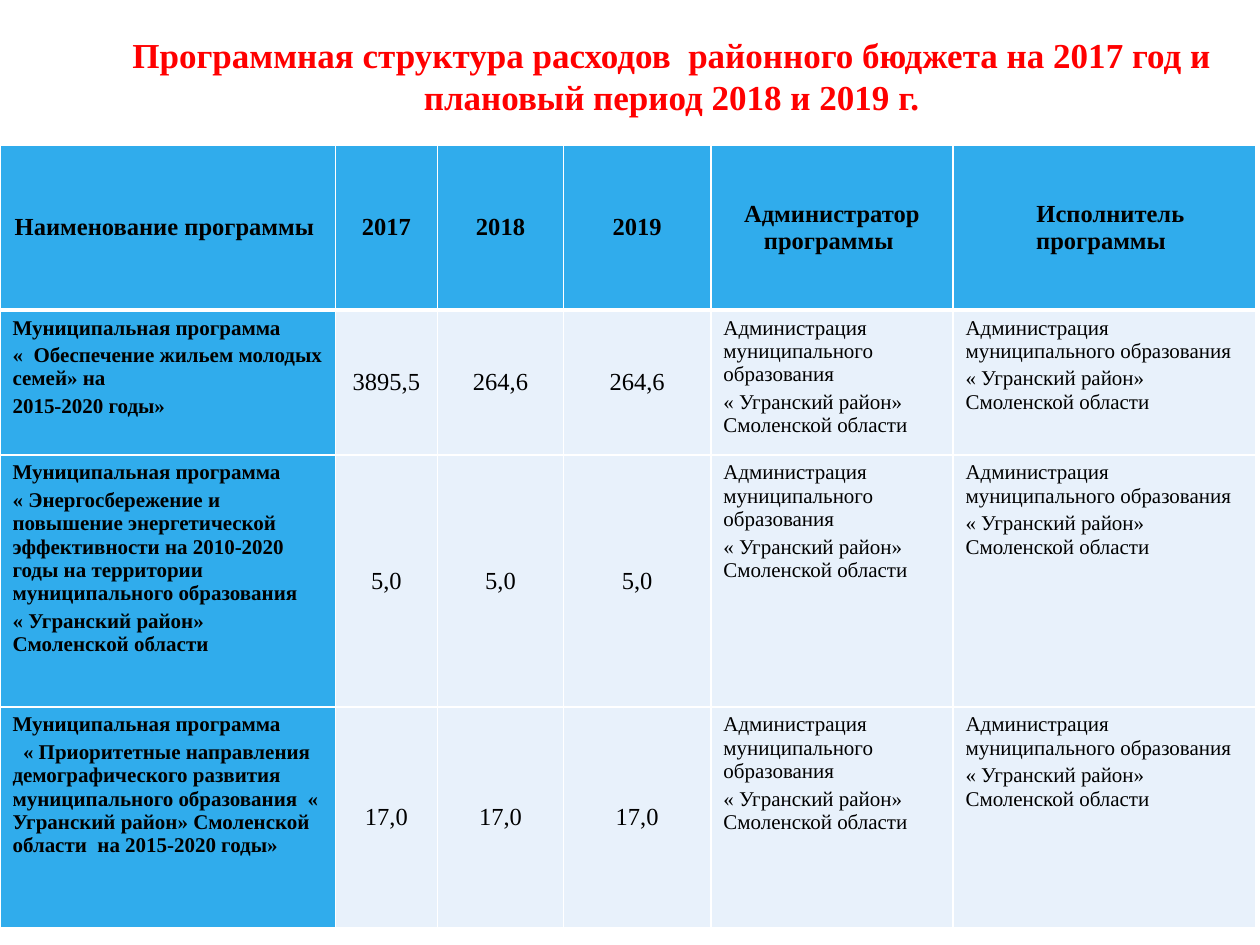
"""Build the slide with the programme structure of the district budget."""
from dataclasses import dataclass

from lxml.etree import SubElement
from pptx import Presentation
from pptx.dml.color import RGBColor
from pptx.enum.text import MSO_ANCHOR as Anchor, MSO_AUTO_SIZE as AutoSize, PP_ALIGN as Align
from pptx.oxml.ns import qn
from pptx.util import Cm, Pt

RED = RGBColor(0xFF, 0x00, 0x00)
BLACK = RGBColor(0x00, 0x00, 0x00)
WHITE = RGBColor(0xFF, 0xFF, 0xFF)
BLUE = RGBColor(0x30, 0xAC, 0xEC)
PALE = RGBColor(0xE8, 0xF1, 0xFB)
FONT = "Times New Roman"

COLS = [6.76, 2.06, 2.54, 2.97, 4.88, 6.1]
ROWS = [3.33, 2.92, 5.08, 4.45]
HEADS = ["Наименование программы ", "2017", "2018", "2019",
         "Администратор программы ", "Исполнитель программы "]
OFFICE = ["Администрация муниципального образования",
          "« Угранский район» Смоленской области"]


@dataclass
class Programme:
    name: list[str]
    sums: list[str]


@dataclass
class Style:
    size: int
    bold: bool
    fill: RGBColor
    centred: bool


HEAD = Style(14, True, BLUE, True)
NAME = Style(12, True, BLUE, False)
SUM = Style(14, False, PALE, True)
BODY = Style(12, False, PALE, False)

PROGRAMMES = [
    Programme(["Муниципальная программа",
               "«  Обеспечение жильем молодых семей» на",
               "2015-2020 годы»"], ["3895,5", "264,6", "264,6"]),
    Programme(["Муниципальная программа",
               "« Энергосбережение и повышение энергетической эффективности на 2010-2020 "
               "годы на территории муниципального образования",
               "« Угранский район» Смоленской области"], ["5,0"] * 3),
    Programme(["Муниципальная программа",
               "« Приоритетные направления  демографического развития  муниципального "
               "образования  « Угранский район» Смоленской области  на 2015-2020 годы»"],
              ["17,0"] * 3),
]


def add_run(p, text: str, size: int, bold: bool, color: RGBColor) -> None:
    """Add one formatted run to a paragraph."""
    r = p.add_run()
    r.text = text
    r.font.name, r.font.size, r.font.bold = FONT, Pt(size), bold
    r.font.color.rgb = color


def set_borders(cell, top: int, bottom: int) -> None:
    """Give a cell white borders, placed ahead of its fill."""
    tc_pr = cell._tc.get_or_add_tcPr()
    widths = {"a:lnL": 1, "a:lnR": 1, "a:lnT": top, "a:lnB": bottom}
    for tag, width in widths.items():
        ln = SubElement(tc_pr, qn(tag), w=str(Pt(width)))
        fill = SubElement(ln, qn("a:solidFill"))
        SubElement(fill, qn("a:srgbClr"), val=str(WHITE))


def fill_cell(cell, lines: list[str], style: Style, row: int) -> None:
    """Write the paragraphs of a cell and set its look."""
    set_borders(cell, 3 if row == 1 else 1, 3 if row == 0 else 1)
    cell.fill.solid()
    cell.fill.fore_color.rgb = style.fill
    cell.vertical_anchor = Anchor.MIDDLE if style.centred else Anchor.TOP
    tf = cell.text_frame
    for i, line in enumerate(lines):
        p = tf.add_paragraph() if i else tf.paragraphs[0]
        p.alignment = Align.CENTER if style.centred else Align.LEFT
        p.space_before = Pt(0.2 * style.size if i else 0)
        add_run(p, line, style.size, style.bold, BLACK)


def indent_first_line(p, indent: Cm) -> None:
    """Indent the first line of a paragraph."""
    p_pr = p._p.get_or_add_pPr()
    p_pr.set("marL", "0")
    p_pr.set("indent", str(int(indent)))


def add_title(s, text: str) -> None:
    """Place and format the slide title."""
    sp = s.shapes.title
    sp.left, sp.top, sp.width, sp.height = Cm(2.11), Cm(0.84), Cm(22.86), Cm(1.35)
    tf = sp.text_frame
    tf.word_wrap, tf.auto_size = True, AutoSize.NONE
    tf.vertical_anchor = Anchor.MIDDLE
    p = tf.paragraphs[0]
    p.alignment = Align.CENTER
    add_run(p, text, 20, True, RED)


def add_budget_table(s) -> None:
    """Add the table of programmes."""
    tbl = s.shapes.add_table(len(ROWS), len(COLS), Cm(0), Cm(2.92),
                             Cm(sum(COLS)), Cm(sum(ROWS))).table
    for col, width in zip(tbl.columns, COLS):
        col.width = Cm(width)
    for row, height in zip(tbl.rows, ROWS):
        row.height = Cm(height)
    for c, head in enumerate(HEADS):
        fill_cell(tbl.cell(0, c), [head], HEAD, 0)
    styles = [NAME, SUM, SUM, SUM, BODY, BODY]
    for r, prog in enumerate(PROGRAMMES, 1):
        texts = [prog.name, *([value] for value in prog.sums), OFFICE, OFFICE]
        for c, (lines, style) in enumerate(zip(texts, styles)):
            fill_cell(tbl.cell(r, c), lines, style, r)
    indent_first_line(tbl.cell(0, 5).text_frame.paragraphs[0], Cm(0.25))
    indent_first_line(tbl.cell(3, 0).text_frame.paragraphs[1], Cm(0.21))


def main() -> None:
    """Build and save the presentation."""
    prs = Presentation()
    prs.slide_width, prs.slide_height = Cm(25.4), Cm(19.05)
    s = prs.slides.add_slide(prs.slide_layouts[5])
    add_title(s, "Программная структура расходов  районного бюджета на 2017 год "
                 "и плановый период 2018 и 2019 г.")
    add_budget_table(s)
    prs.save("out.pptx")


if __name__ == "__main__":
    main()
